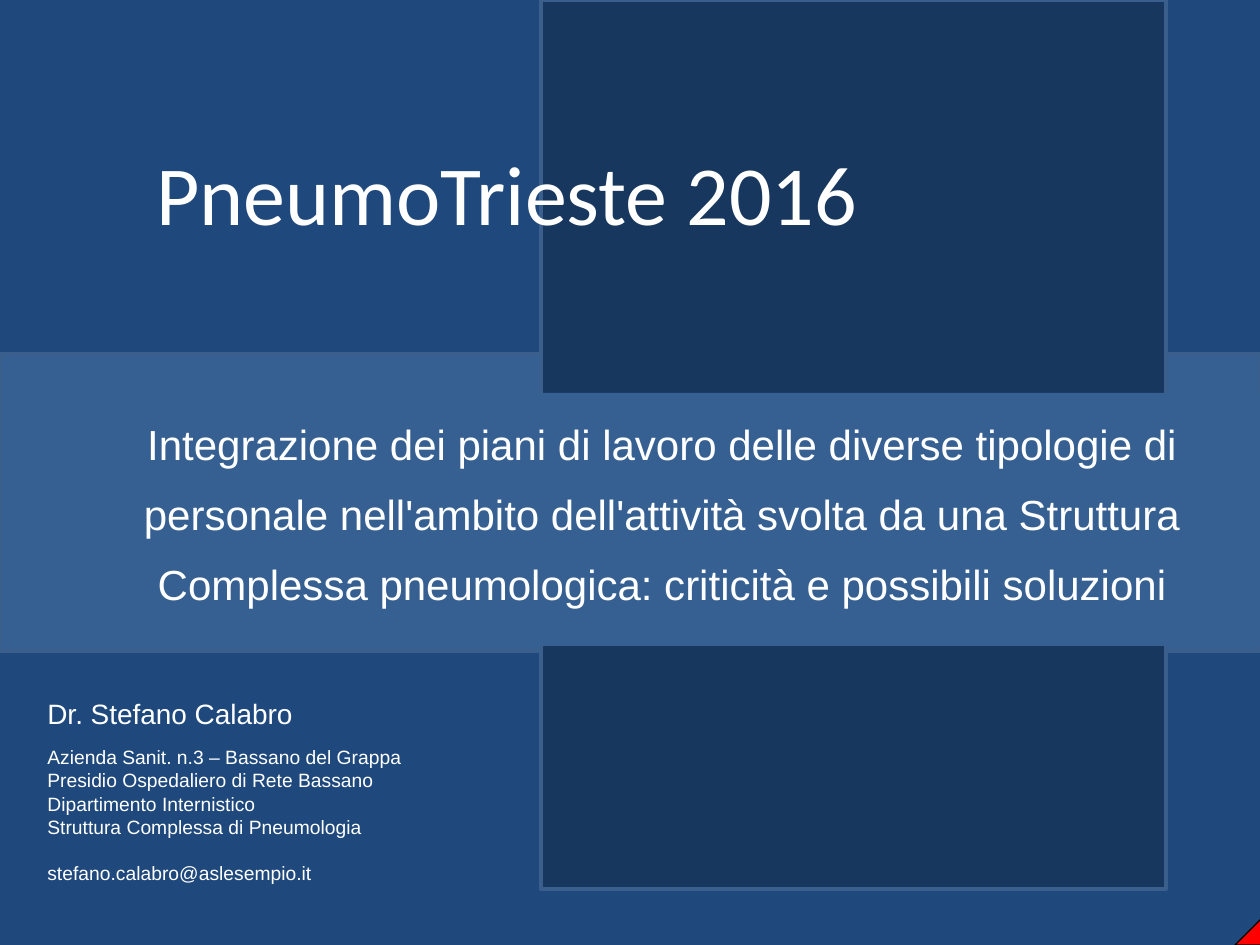
import pptx
import pptx.util
import pptx.dml.color
import pptx.enum.shapes
import pptx.enum.text

PX = 914400 // 126
COLORS = {
    "background": "1F497D",
    "band": "376092",
    "panel": "17375E",
    "edge": "3A5F8C",
    "corner": "FF0000",
    "black": "000000",
    "text": "FFFFFF",
}
SHAPES = pptx.enum.shapes.MSO_SHAPE
ALIGN = pptx.enum.text.PP_ALIGN

TOPIC = (
    "Integrazione dei piani di lavoro delle diverse tipologie di personale "
    "nell'ambito dell'attività svolta da una Struttura Complessa pneumologica: "
    "criticità e possibili soluzioni"
)
AFFILIATION = "\v".join([
    "Azienda Sanit. n.3 – Bassano del Grappa",
    "Presidio Ospedaliero di Rete Bassano",
    "Dipartimento Internistico",
    "Struttura Complessa di Pneumologia",
])


def rgb(name):
    return pptx.dml.color.RGBColor.from_string(COLORS[name])


def emu(box):
    return [pptx.util.Emu(v * PX) for v in box]


def add_block(slide, kind, box, fill, line=None, width=2):
    s = slide.shapes.add_shape(kind, *emu(box))
    s.shadow.inherit = False
    s.fill.solid()
    s.fill.fore_color.rgb = rgb(fill)
    if line:
        s.line.color.rgb = rgb(line)
        s.line.width = pptx.util.Pt(width)
    else:
        s.line.fill.background()
    return s


def write(s, paragraphs):
    """Fill a shape with (text, size, font, paragraph format) entries."""
    tf = s.text_frame
    tf.word_wrap = True
    tf.vertical_anchor = pptx.enum.text.MSO_ANCHOR.TOP
    for i, (text, size, font, fmt) in enumerate(paragraphs):
        p = tf.add_paragraph() if i else tf.paragraphs[0]
        p.text = text
        for name, value in {"alignment": ALIGN.LEFT, **fmt}.items():
            setattr(p, name, value)
        for r in p.runs:
            r.font.size = pptx.util.Pt(size)
            r.font.name = font
            r.font.color.rgb = rgb("text")


def add_text(slide, box, paragraphs):
    write(slide.shapes.add_textbox(*emu(box)), paragraphs)


def main():
    pt = pptx.util.Pt
    prs = pptx.Presentation()
    prs.slide_width, prs.slide_height = emu((1260, 945))
    slide = prs.slides.add_slide(prs.slide_layouts[6])
    slide.background.fill.solid()
    slide.background.fill.fore_color.rgb = rgb("background")

    add_block(slide, SHAPES.RECTANGLE, (0, 354, 1260, 297), "band", "edge")
    add_block(slide, SHAPES.RECTANGLE, (541, 0, 625, 889), "panel", "edge")
    topic = add_block(slide, SHAPES.RECTANGLE, (64, 393, 1196, 253), "band")
    write(topic, [(TOPIC, 24, "Arial",
                   {"alignment": ALIGN.CENTER, "line_spacing": pt(40)})])

    corner = add_block(slide, SHAPES.RIGHT_TRIANGLE, (1235, 919, 26, 26),
                       "corner", "black", 0.75)
    corner.rotation = 270

    add_text(slide, (35, 690, 507, 208), [
        ("Dr. Stefano Calabro", 16, "Arial", {"space_before": pt(2)}),
        (AFFILIATION, 11, "Arial", {"space_before": pt(9)}),
        ("stefano.calabro@aslesempio.it", 11, "Arial", {"space_before": pt(13)}),
    ])
    add_text(slide, (144, 135, 1116, 115),
             [("PneumoTrieste 2016", 48, "Calibri", {})])

    prs.save("out.pptx")


if __name__ == "__main__":
    main()
